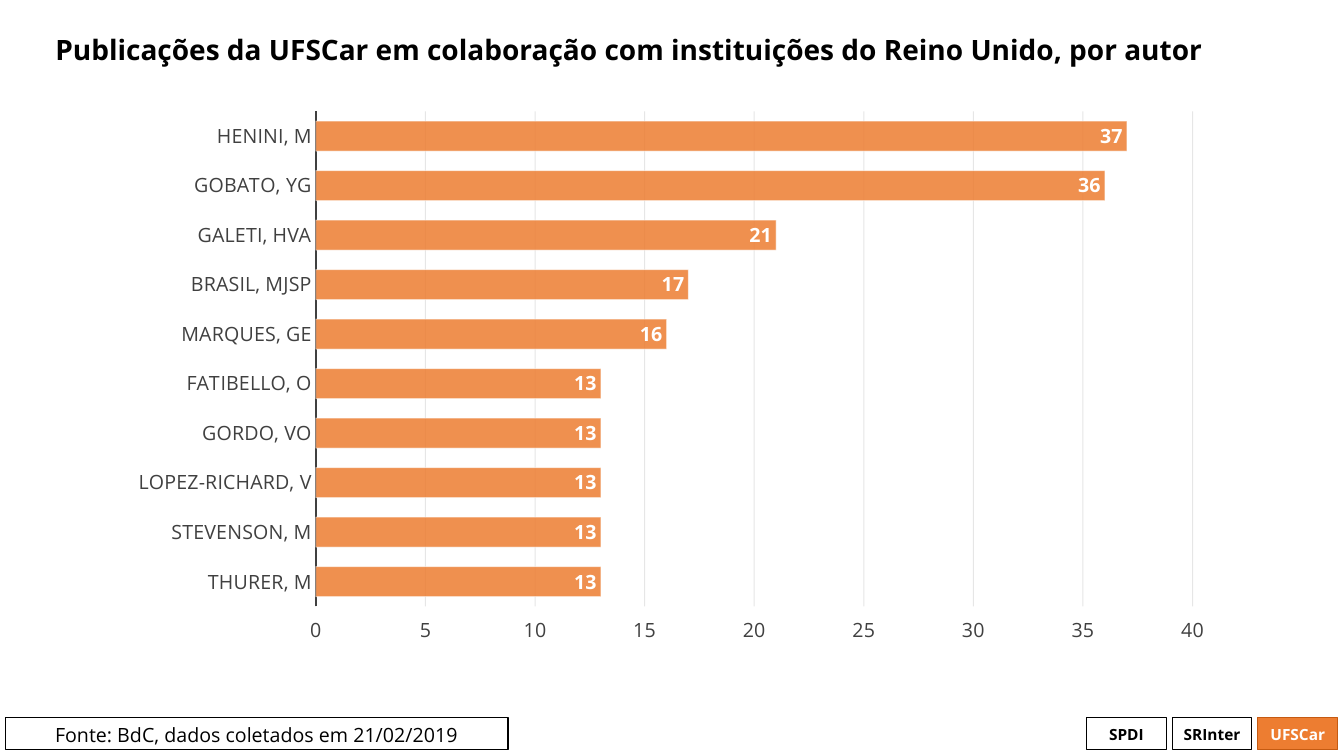
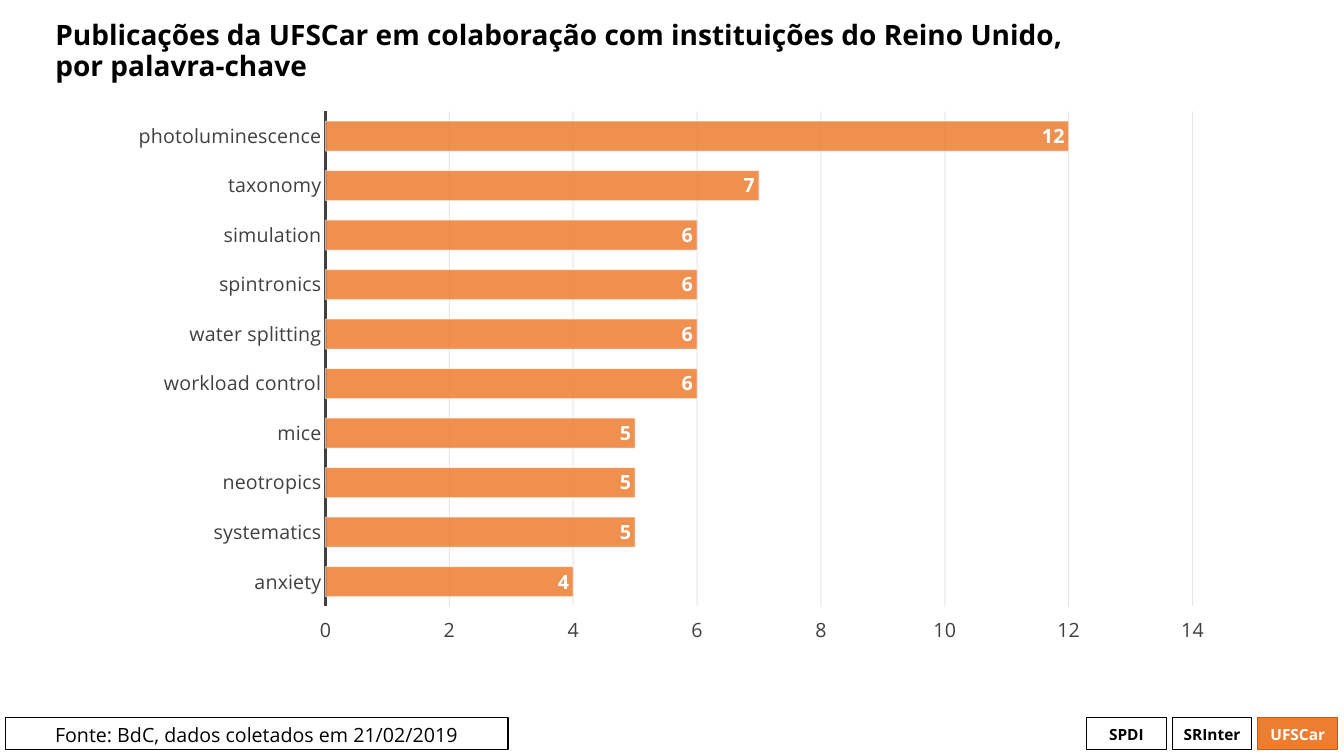
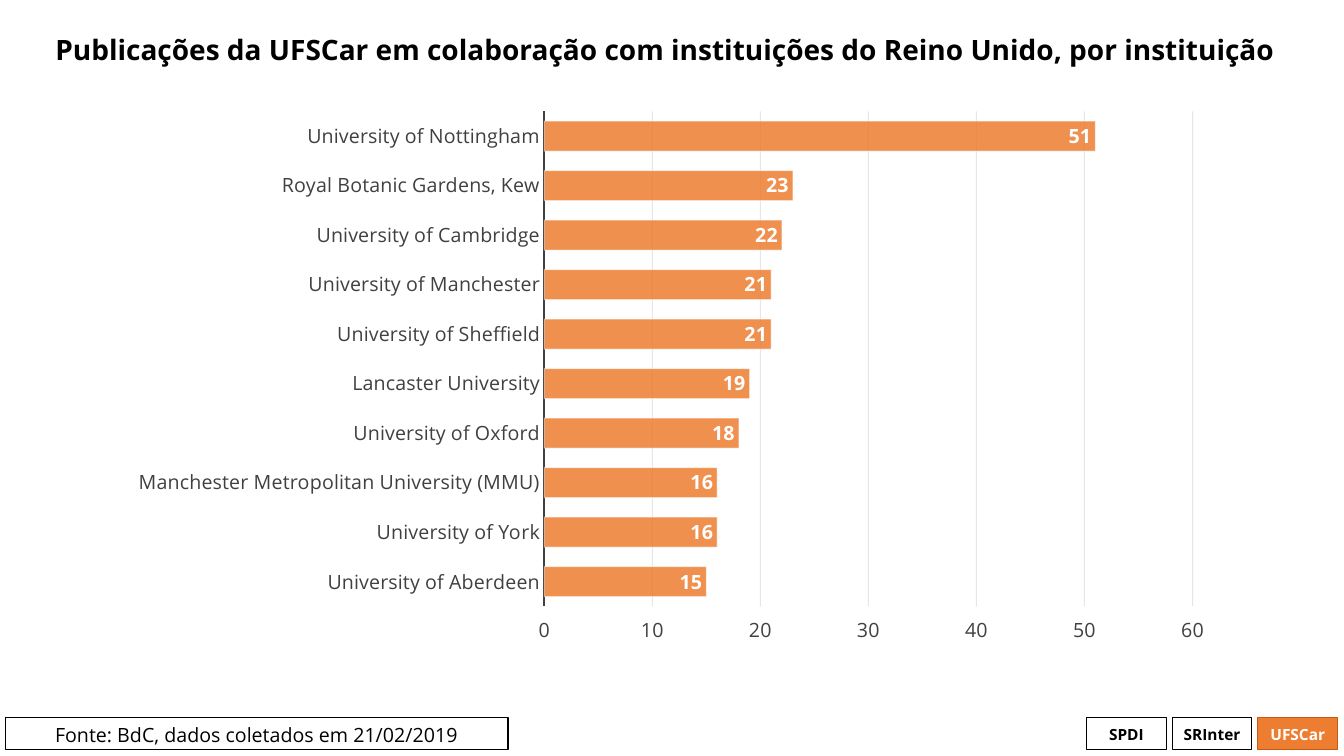
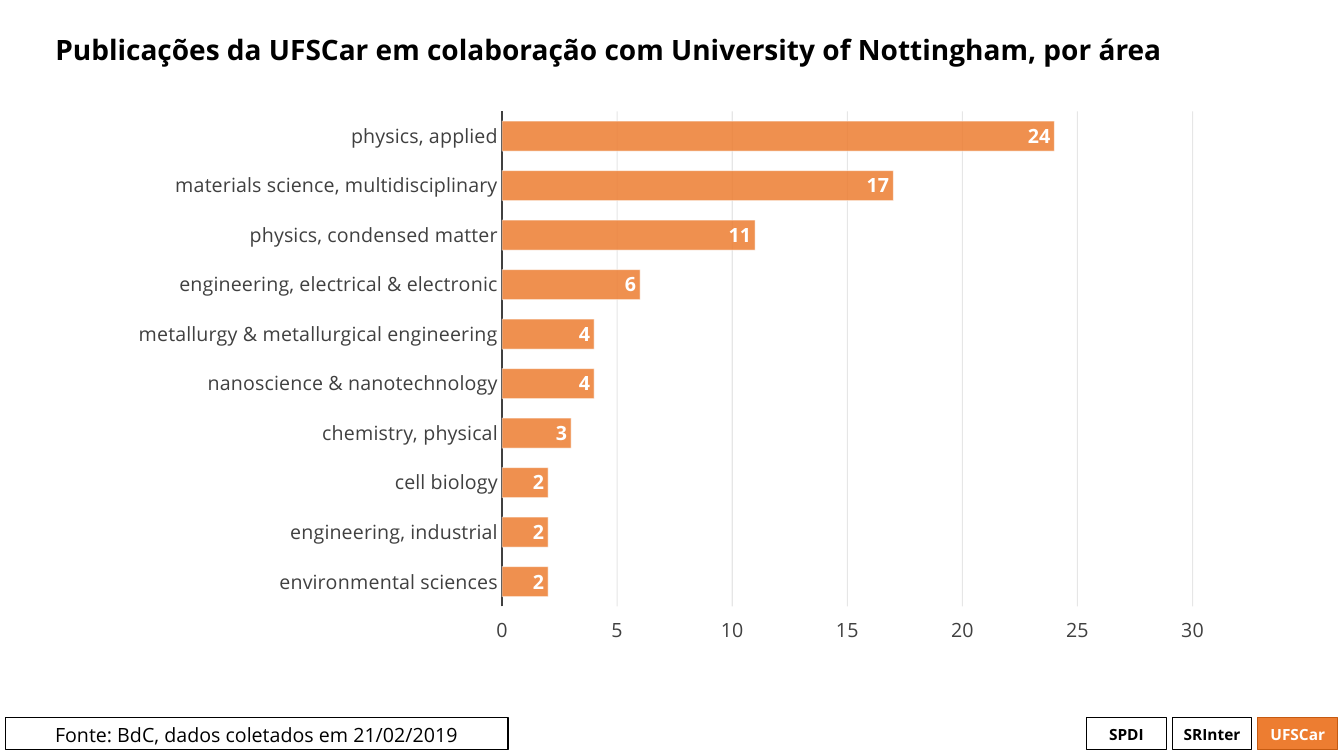
from lxml import etree
from pptx import Presentation
from pptx import util as u
from pptx.chart.data import CategoryChartData
from pptx.dml.color import RGBColor
from pptx.enum import chart as ch, shapes, text
from pptx.oxml import parse_xml
from pptx.oxml.ns import nsdecls, qn

BLACK = RGBColor(0x00, 0x00, 0x00)
WHITE = RGBColor(0xFF, 0xFF, 0xFF)
ORANGE = RGBColor(0xED, 0x7D, 0x31)
BROWN = RGBColor(0xC5, 0x5A, 0x11)
GRAY = RGBColor(0x40, 0x40, 0x40)
GRID = RGBColor(0x0D, 0x0D, 0x0D)
FONT = "Open Sans"

FOOT_TOP, FOOT_H = 7.12, 0.32
TAG_LEFT, TAG_W, TAG_STEP = 10.78, 0.79, 0.85
UK = "Publicações da UFSCar em colaboração com instituições do Reino Unido,"

FOOTER = [("Fonte: BdC, dados coletados em 21/02/2019", 0.05, 4.99, 14, False, None, BLACK, BLACK)]
for i, (tag, fill, line, color) in enumerate([
    ("SPDI", None, BLACK, BLACK),
    ("SRInter", None, BLACK, BLACK),
    ("UFSCar", ORANGE, BROWN, WHITE),
]):
    FOOTER.append((tag, TAG_LEFT + i * TAG_STEP, TAG_W, 11, True, fill, line, color))

SLIDES = [
    (UK + " por autor", 40, 5, [
        ("HENINI, M", 37), ("GOBATO, YG", 36), ("GALETI, HVA", 21),
        ("BRASIL, MJSP", 17), ("MARQUES, GE", 16), ("FATIBELLO, O", 13),
        ("GORDO, VO", 13), ("LOPEZ-RICHARD, V", 13), ("STEVENSON, M", 13),
        ("THURER, M", 13)]),
    (UK + "\npor palavra-chave", 14, 2, [
        ("photoluminescence", 12), ("taxonomy", 7), ("simulation", 6),
        ("spintronics", 6), ("water splitting", 6), ("workload control", 6),
        ("mice", 5), ("neotropics", 5), ("systematics", 5), ("anxiety", 4)]),
    (UK + " por instituição", 60, 10, [
        ("University of Nottingham", 51), ("Royal Botanic Gardens, Kew", 23),
        ("University of Cambridge", 22), ("University of Manchester", 21),
        ("University of Sheffield", 21), ("Lancaster University", 19),
        ("University of Oxford", 18),
        ("Manchester Metropolitan University (MMU)", 16),
        ("University of York", 16), ("University of Aberdeen", 15)]),
    ("Publicações da UFSCar em colaboração com University of Nottingham, por área", 30, 5, [
        ("physics, applied", 24), ("materials science, multidisciplinary", 17),
        ("physics, condensed matter", 11),
        ("engineering, electrical & electronic", 6),
        ("metallurgy & metallurgical engineering", 4),
        ("nanoscience & nanotechnology", 4), ("chemistry, physical", 3),
        ("cell biology", 2), ("engineering, industrial", 2),
        ("environmental sciences", 2)]),
]


def style(font, size, color, bold=False):
    font.name, font.size, font.bold = FONT, u.Pt(size), bold
    font.color.rgb = color


def set_alpha(element, *shares):
    for clr, share in zip(element.iter(qn("a:srgbClr")), shares):
        etree.SubElement(clr, qn("a:alpha")).set("val", str(share * 1000))


prs = Presentation()
prs.slide_width, prs.slide_height = u.Inches(40 / 3), u.Inches(7.5)

for title, top_value, step, rows in SLIDES:
    s = prs.slides.add_slide(prs.slide_layouts[6])

    for label, left, width, size, bold, fill, line, color in FOOTER:
        sp = s.shapes.add_shape(shapes.MSO_SHAPE.RECTANGLE, u.Inches(left),
                                u.Inches(FOOT_TOP), u.Inches(width), u.Inches(FOOT_H))
        sp.shadow.inherit = False
        if fill is None:
            sp.fill.background()
        else:
            sp.fill.solid()
            sp.fill.fore_color.rgb = fill
        sp.line.color.rgb = line
        sp.line.width = u.Pt(0.75)
        tf = sp.text_frame
        tf.vertical_anchor = text.MSO_ANCHOR.MIDDLE if bold else text.MSO_ANCHOR.TOP
        p = tf.paragraphs[0]
        p.text = label
        p.alignment = text.PP_ALIGN.CENTER
        style(p.runs[0].font, size, color, bold)

    tf = s.shapes.add_textbox(u.Inches(0.45), u.Inches(0.06),
                              u.Inches(12.41), u.Inches(0.91)).text_frame
    tf.word_wrap = True
    tf.vertical_anchor = text.MSO_ANCHOR.MIDDLE
    p = tf.paragraphs[0]
    p.text = title
    p.line_spacing = 0.9
    for r in p.runs:
        style(r.font, 20, BLACK, True)

    data = CategoryChartData()
    data.categories = [name for name, count in rows]
    data.add_series("Series 1", [count for name, count in rows])
    chart = s.shapes.add_chart(ch.XL_CHART_TYPE.BAR_CLUSTERED, u.Inches(1.15), u.Inches(0.99),
                               u.Inches(11.02), u.Inches(5.51), data).chart
    chart.has_legend = chart.has_title = False
    style(chart.font, 14, BLACK)
    chart._chartSpace.find(qn("c:txPr")).addprevious(parse_xml(
        f'<c:spPr {nsdecls("c", "a")}>'
        f'<a:solidFill><a:srgbClr val="{WHITE}"/></a:solidFill>'
        f'<a:ln w="9525"><a:solidFill><a:srgbClr val="{WHITE}"/></a:solidFill></a:ln></c:spPr>'))

    cats, vals = chart.category_axis, chart.value_axis
    for axis in (cats, vals):
        axis.major_tick_mark = axis.minor_tick_mark = ch.XL_TICK_MARK.NONE
        style(axis.tick_labels.font, 14, GRAY)
    cats.reverse_order = True
    cats.format.line.color.rgb = GRAY
    cats.format.line.width = u.Pt(1.5)
    vals.tick_label_position = ch.XL_TICK_LABEL_POSITION.HIGH
    vals.minimum_scale, vals.maximum_scale, vals.major_unit = 0, top_value, step
    vals.format.line.fill.background()
    grid = vals.major_gridlines.format.line
    grid.color.rgb = GRID
    grid.width = u.Pt(0.75)
    set_alpha(vals._element.find(qn("c:majorGridlines")), 10)

    plot = chart.plots[0]
    plot.gap_width = 65
    plot.vary_by_categories = False
    bars = plot.series[0]
    bars.format.fill.solid()
    bars.format.fill.fore_color.rgb = ORANGE
    bars.format.line.color.rgb = WHITE
    bars.format.line.width = u.Pt(0.75)
    set_alpha(bars._element.find(qn("c:spPr")), 85, 50)
    labels = bars.data_labels
    labels.show_value = True
    labels.position = ch.XL_LABEL_POSITION.INSIDE_END
    style(labels.font, 14, WHITE, True)

prs.save("out.pptx")
